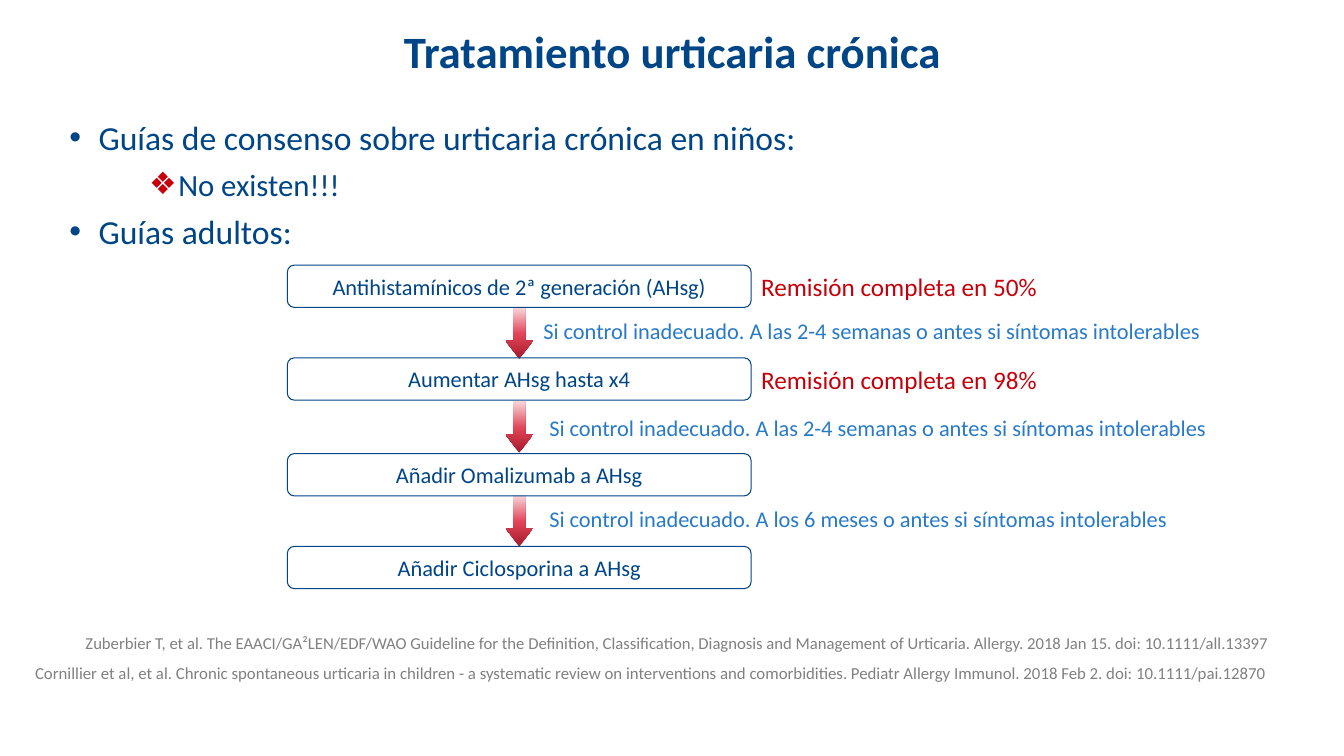
from lxml import etree
from pptx import Presentation
from pptx.dml.color import RGBColor
from pptx.enum.shapes import MSO_SHAPE
from pptx.enum.text import MSO_ANCHOR, PP_ALIGN
from pptx.oxml import parse_xml
from pptx.oxml.ns import nsdecls, qn
from pptx.util import Inches, Pt

NAVY = RGBColor(0x00, 0x45, 0x86)
BLUE = RGBColor(0x28, 0x7A, 0xC8)
RED = RGBColor(0xC5, 0x00, 0x0B)
GRAY = RGBColor(0x80, 0x80, 0x80)
ARROW_STOPS = [
    (0, RGBColor(0xA5, 0x1B, 0x2C)),
    (48, RGBColor(0xE1, 0x44, 0x57)),
    (100, RGBColor(0xF9, 0xD8, 0xDC)),
]
FONT = "Calibri"

TITLE = "Tratamiento urticaria crónica"
# text, level, bullet, bullet colour, left margin, size
GUIDELINES = [
    ("Guías de consenso sobre urticaria crónica en niños:", 0, "•", NAVY, 0.88, 24),
    ("No existen!!!", 1, "❖", RED, 1.67, 22),
    ("Guías adultos:", 0, "•", NAVY, 0.88, 24),
]
# top, treatment
STEPS = [
    (2.63, "Antihistamínicos de 2ª generación (AHsg)"),
    (3.55, "Aumentar AHsg hasta x4"),
    (4.5, "Añadir Omalizumab a AHsg"),
    (5.42, "Añadir Ciclosporina a AHsg"),
]
REMISSIONS = ["Remisión completa en 50%", "Remisión completa en 98%"]
# left, top, condition for moving on to the next step
CONDITIONS = [
    (5.29, 3.04, "Si control inadecuado. A las 2-4 semanas o antes si síntomas intolerables"),
    (5.35, 4.0, "Si control inadecuado. A las 2-4 semanas o antes si síntomas intolerables"),
    (5.35, 4.9, "Si control inadecuado. A los 6 meses o antes si síntomas intolerables"),
]
# top, size, citation
CITATIONS = [
    (6.23, 11.9, "Zuberbier T, et al. The EAACI/GA²LEN/EDF/WAO Guideline for the Definition, "
     "Classification, Diagnosis and Management of Urticaria. Allergy. 2018 Jan 15. "
     "doi: 10.1111/all.13397"),
    (6.53, 12, "Cornillier et al, et al. Chronic spontaneous urticaria in children - a systematic "
     "review on interventions and comorbidities. Pediatr Allergy Immunol. 2018 Feb 2. "
     "doi: 10.1111/pai.12870"),
]

STEP_LEFT, STEP_WIDTH, STEP_HEIGHT = 2.85, 4.6, 0.42
ARROW_WIDTH, ARROW_HEIGHT = 0.27, 0.51
ARROW_TOP, ARROW_PITCH = 3.05, 0.93


def style(paragraph, size, color, bold=False, align=PP_ALIGN.LEFT):
    paragraph.alignment = align
    font = paragraph.font
    for run in paragraph.runs:
        font = run.font
        font.name, font.size, font.bold = FONT, Pt(size), bold
        font.color.rgb = color


def write(shape, text, size, color, bold=False, align=PP_ALIGN.LEFT, anchor=MSO_ANCHOR.MIDDLE):
    frame = shape.text_frame
    frame.word_wrap = True
    frame.vertical_anchor = anchor
    frame.text = text
    style(frame.paragraphs[0], size, color, bold, align)


def add_text(slide, box, *args, **kwargs):
    shape = slide.shapes.add_textbox(*map(Inches, box))
    write(shape, *args, **kwargs)


def add_bullet(paragraph, character, color, margin):
    properties = paragraph._p.get_or_add_pPr()
    properties.set("marL", str(Inches(margin)))
    properties.set("indent", str(Inches(-0.29)))
    bullet_color = etree.SubElement(properties, qn("a:buClr"))
    etree.SubElement(bullet_color, qn("a:srgbClr")).set("val", str(color))
    etree.SubElement(properties, qn("a:buFont")).set("typeface", "Arial")
    etree.SubElement(properties, qn("a:buChar")).set("char", character)


def add_guidelines(slide):
    frame = slide.shapes.add_textbox(0, Inches(1.11), Inches(12.67), Inches(1.43)).text_frame
    frame.word_wrap = True
    for index, (text, level, character, color, margin, size) in enumerate(GUIDELINES):
        paragraph = frame.add_paragraph() if index else frame.paragraphs[0]
        paragraph.text = text
        paragraph.level = level
        add_bullet(paragraph, character, color, margin)
        if index:
            paragraph.space_before = Pt(6)
        style(paragraph, size, NAVY)


def add_arrow(slide, top):
    left = STEP_LEFT + (STEP_WIDTH - ARROW_WIDTH) / 2
    arrow = slide.shapes.add_shape(
        MSO_SHAPE.UP_ARROW, *map(Inches, (left, top, ARROW_WIDTH, ARROW_HEIGHT)))
    arrow.rotation = 180
    arrow.adjustments[0], arrow.adjustments[1] = 0.434, 0.658
    arrow.shadow.inherit = False
    arrow.line.fill.background()
    stops = "".join(f'<a:gs pos="{position * 1000}"><a:srgbClr val="{color}"/></a:gs>'
                    for position, color in ARROW_STOPS)
    gradient = parse_xml(f'<a:gradFill {nsdecls("a")} rotWithShape="1"><a:gsLst>{stops}</a:gsLst>'
                         '<a:lin ang="5400000" scaled="0"/></a:gradFill>')
    arrow._element.spPr.find(qn("a:prstGeom")).addnext(gradient)


def add_step(slide, top, text):
    step = slide.shapes.add_shape(
        MSO_SHAPE.ROUNDED_RECTANGLE, *map(Inches, (STEP_LEFT, top, STEP_WIDTH, STEP_HEIGHT)))
    step.shadow.inherit = False
    step.fill.background()
    step.line.color.rgb = NAVY
    step.line.width = Pt(0.75)
    write(step, text, 16, NAVY, align=PP_ALIGN.CENTER)


def main():
    presentation = Presentation()
    presentation.slide_width, presentation.slide_height = Inches(13.33), Inches(7.5)
    slide = presentation.slides.add_slide(presentation.slide_layouts[6])

    add_guidelines(slide)
    add_text(slide, (0.67, 0.17, 12, 0.66), TITLE, 32, NAVY, bold=True, align=PP_ALIGN.CENTER)
    for index in range(len(STEPS) - 1):
        add_arrow(slide, ARROW_TOP + index * ARROW_PITCH)
    for top, text in STEPS:
        add_step(slide, top, text)
    for left, top, text in CONDITIONS:
        add_text(slide, (left, top, 7.14, 0.48), text, 16, BLUE)
    for (top, _), text in zip(STEPS, REMISSIONS):
        add_text(slide, (STEP_LEFT + STEP_WIDTH, top, 3.59, 0.42), text, 18, RED)
    for top, size, text in CITATIONS:
        add_text(slide, (0, top, 12.67, 0.32), text, size, GRAY,
                 align=PP_ALIGN.RIGHT, anchor=MSO_ANCHOR.TOP)

    presentation.save("out.pptx")


if __name__ == "__main__":
    main()
